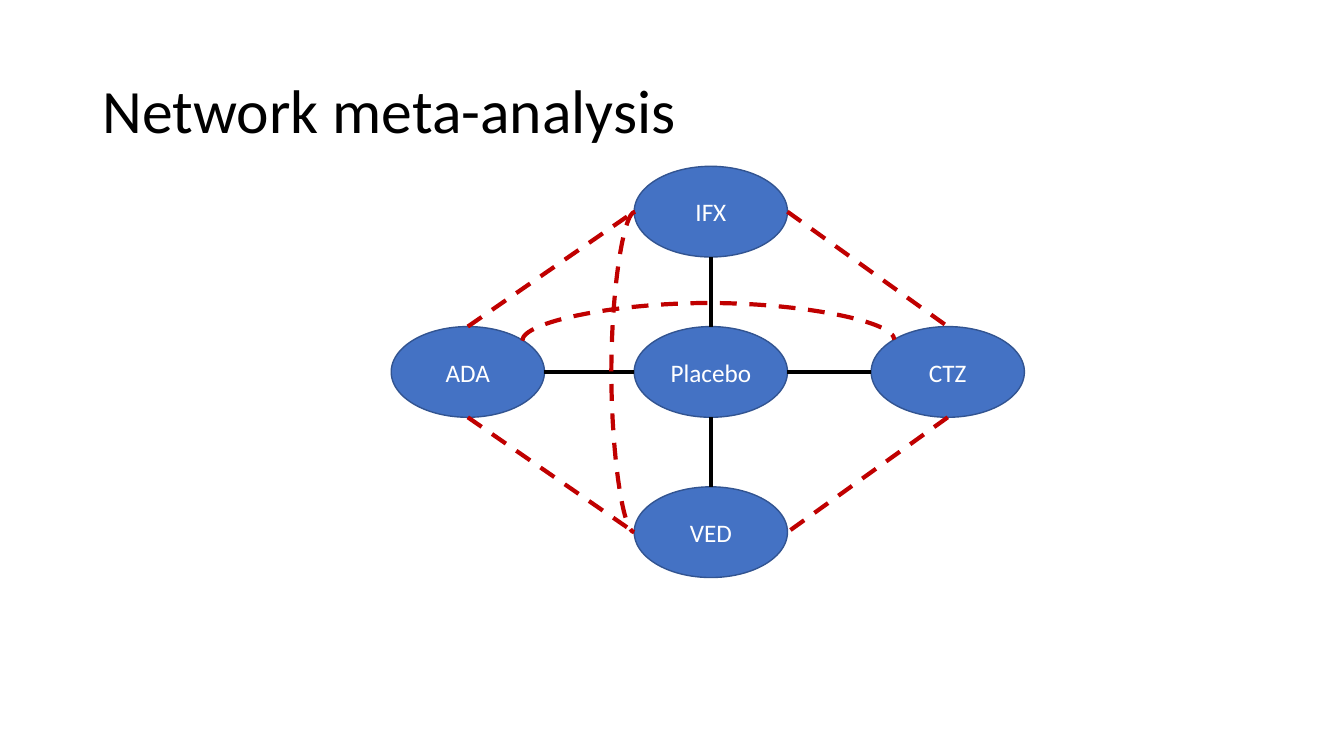
from lxml import etree
from pptx import Presentation
from pptx import util as u
from pptx.dml.color import RGBColor
from pptx.enum import dml, shapes, text
from pptx.oxml.ns import qn

# Grid of node centres, in inches
COLS = (4.64, 7.05, 9.40)
ROWS = (2.10, 3.69, 5.28)
NODE_W, NODE_H = 1.52, 0.90
FONT = "Calibri"
BLACK, WHITE, RED = "000000", "FFFFFF", "C00000"
BLUE, BLUE_EDGE = "4472C4", "325491"

# Treatments as (column, row)
NODES = {"Placebo": (1, 1), "IFX": (1, 0), "CTZ": (2, 1),
         "ADA": (0, 1), "VED": (1, 2)}
# Sides of a node as offsets from its centre, in half sizes
SIDES = {"top": (0, -1), "bottom": (0, 1), "left": (-1, 0), "right": (1, 0)}
DIRECT = [("IFX", "bottom", "Placebo", "top"),
          ("ADA", "right", "Placebo", "left"),
          ("Placebo", "right", "CTZ", "left"),
          ("Placebo", "bottom", "VED", "top")]
INDIRECT = [("ADA", "top", "IFX", "left"),
            ("IFX", "right", "CTZ", "top"),
            ("ADA", "bottom", "VED", "left"),
            ("CTZ", "bottom", "VED", "right")]


def color(value):
    return RGBColor.from_string(value)


def add_run(p, words, size, ink):
    r = p.add_run()
    r.text = words
    r.font.name = FONT
    r.font.size = u.Pt(size)
    r.font.color.rgb = color(ink)


def add_title(s, words):
    sp = s.shapes.add_textbox(*map(u.Inches, (0.92, 0.40, 11.50, 1.45)))
    tf = sp.text_frame
    tf.word_wrap = True
    tf.vertical_anchor = text.MSO_ANCHOR.MIDDLE
    p = tf.paragraphs[0]
    p.line_spacing = 0.9
    add_run(p, words, 44, BLACK)


def add_node(s, name):
    col, row = NODES[name]
    sp = s.shapes.add_shape(
        shapes.MSO_SHAPE.OVAL,
        u.Inches(COLS[col] - NODE_W / 2), u.Inches(ROWS[row] - NODE_H / 2),
        u.Inches(NODE_W), u.Inches(NODE_H))
    sp.shadow.inherit = False
    sp.fill.solid()
    sp.fill.fore_color.rgb = color(BLUE)
    sp.line.color.rgb = color(BLUE_EDGE)
    sp.line.width = u.Pt(1)
    tf = sp.text_frame
    tf.vertical_anchor = text.MSO_ANCHOR.MIDDLE
    p = tf.paragraphs[0]
    p.alignment = text.PP_ALIGN.CENTER
    add_run(p, name, 18, WHITE)


def side_point(name, side):
    col, row = NODES[name]
    dx, dy = SIDES[side]
    return COLS[col] + dx * NODE_W / 2, ROWS[row] + dy * NODE_H / 2


def add_link(s, begin, end, ink, dashed=False, kind=shapes.MSO_CONNECTOR.STRAIGHT):
    link = s.shapes.add_connector(kind, *map(u.Inches, begin + end))
    link.line.color.rgb = color(ink)
    link.line.width = u.Pt(3)
    if dashed:
        link.line.dash_style = dml.MSO_LINE.DASH
    etree.SubElement(link._element.spPr, qn("a:effectLst"))
    return link


def add_arc(s, begin, end, bulge, turn=0):
    """Curve bulging to the left of its box, then turned clockwise."""
    link = add_link(s, begin, end, RED, True, shapes.MSO_CONNECTOR.CURVE)
    spPr = link._element.spPr
    spPr.find(qn("a:xfrm")).set("rot", str(turn * 60000))
    geom = spPr.find(qn("a:prstGeom"))
    guides = geom.find(qn("a:avLst"))
    if guides is None:
        guides = etree.SubElement(geom, qn("a:avLst"))
    share = round(bulge / (begin[0] - end[0]) * 100000)
    etree.SubElement(guides, qn("a:gd"), name="adj1", fmla=f"val {share}")


def main():
    prs = Presentation()
    prs.slide_width, prs.slide_height = u.Inches(13.33), u.Inches(7.5)
    s = prs.slides.add_slide(prs.slide_layouts[6])

    add_title(s, "Network meta-analysis")
    for name in NODES:
        add_node(s, name)

    # Direct comparisons are solid, indirect ones dashed
    for links, ink, dashed in ((DIRECT, BLACK, False), (INDIRECT, RED, True)):
        for a, a_side, b, b_side in links:
            add_link(s, side_point(a, a_side), side_point(b, b_side), ink, dashed)

    # Indirect comparisons across the centre: IFX to VED, ADA to CTZ
    add_arc(s, (6.30, ROWS[0]), (6.29, ROWS[2]), 0.24)
    add_arc(s, (7.03, 5.22), (7.02, 1.53), 0.38, turn=90)

    prs.save("out.pptx")


if __name__ == "__main__":
    main()
